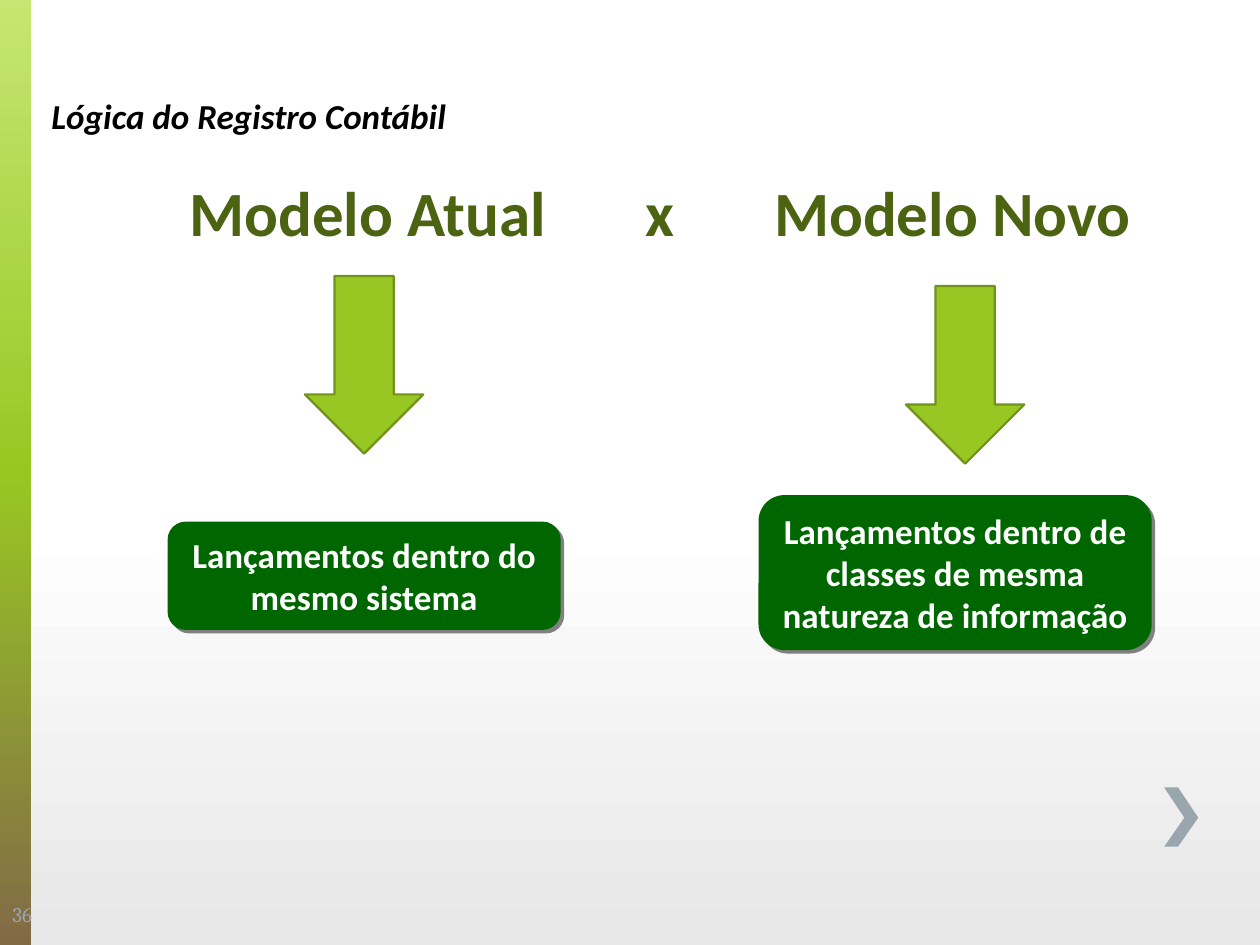
import pptx
import pptx.dml.color
import pptx.enum.shapes
import pptx.enum.text
import pptx.oxml
import pptx.oxml.ns
import pptx.util
from pptx.util import Inches

SHAPES = pptx.enum.shapes.MSO_SHAPE
ALIGN = pptx.enum.text.PP_ALIGN
ANCHOR = pptx.enum.text.MSO_ANCHOR
NAMESPACE = pptx.oxml.ns.nsdecls("a")

THEME = {
    "arrow": "98C723", "arrow_line": "70931A", "box": "006600",
    "shadow": "808080", "chevron": "99A6AE",
    "background": [(0, "FFFFFF"), (55, "FFFFFF"), (100, "E7E7E7")],
    "side_bar": [(0, "C5E672"), (50, "98C723"), (100, "826A47")],
    "title": {"name": "Calibri", "size": 20, "bold": True, "italic": True, "color": "000000"},
    "heading": {"name": "Calibri", "size": 36, "bold": True, "color": "4C6312"},
    "box_text": {"name": "Calibri", "size": 20, "bold": True, "color": "FFFFFF"},
    "number": {"name": "Cambria", "size": 12, "color": "99A6AE"},
}

TITLE = "Lógica do Registro Contábil"
HEADINGS = ["Modelo Atual", "x", "Modelo Novo"]
PAGE_NUMBER = "36"
FIRST_TAB, TAB_STEP = 2.2, 2.32
ARROW_SIZE = (0.94, 1.41)
BOX_WIDTH = 3.12
MODELS = [
    {"text": "Lançamentos dentro do mesmo sistema",
     "arrow": (2.42, 2.19), "box": (1.33, 4.14), "height": 0.86},
    {"text": "Lançamentos dentro de classes de mesma natureza de informação",
     "arrow": (7.19, 2.27), "box": (6.02, 3.93), "height": 1.23},
]
CHEVRON = [(9.35, 6.25), (9.51, 6.49), (9.35, 6.72),
           (9.24, 6.72), (9.4, 6.49), (9.24, 6.25)]


def rgb(value):
    return pptx.dml.color.RGBColor.from_string(value)


def paint_solid(shape, color):
    shape.shadow.inherit = False
    shape.fill.solid()
    shape.fill.fore_color.rgb = rgb(color)
    shape.line.fill.background()


def paint_gradient(fill, element, stops):
    """Give fill a top-to-bottom gradient; element is the XML that holds it."""
    fill.gradient()
    fill.gradient_angle = 270
    stop_list = next(element.iter(pptx.oxml.ns.qn("a:gsLst")))
    for stop in list(stop_list):
        stop_list.remove(stop)
    for percent, color in stops:
        stop_list.append(pptx.oxml.parse_xml(
            f'<a:gs {NAMESPACE} pos="{percent * 1000}"><a:srgbClr val="{color}"/></a:gs>'))


def add_shadow(shape):
    shape.shadow.inherit = False
    effects = shape.element.spPr.find(pptx.oxml.ns.qn("a:effectLst"))
    effects.append(pptx.oxml.parse_xml(
        f'<a:outerShdw {NAMESPACE} dist="35560" dir="2700000" algn="ctr" rotWithShape="0">'
        f'<a:srgbClr val="{THEME["shadow"]}"/></a:outerShdw>'))


def write(shape, text, style, align=ALIGN.LEFT, anchor=ANCHOR.TOP):
    frame = shape.text_frame
    frame.word_wrap = True
    frame.vertical_anchor = anchor
    para = frame.paragraphs[0]
    para.alignment = align
    span = para.add_run()
    span.text = text
    for key, value in THEME[style].items():
        if key == "color":
            span.font.color.rgb = rgb(value)
        else:
            setattr(span.font, key, pptx.util.Pt(value) if key == "size" else value)
    return para


def add_text(page, place, text, style, **layout):
    box = page.shapes.add_textbox(*map(Inches, place))
    return write(box, text, style, **layout)


def add_heading(page):
    """Centre each heading on its own evenly spaced tab stop."""
    para = add_text(page, (0.62, 1.33, 8.75, 0.71),
                    "".join("\t" + heading for heading in HEADINGS), "heading")
    stops = "".join(
        f'<a:tab pos="{Inches(FIRST_TAB + index * TAB_STEP)}" algn="ctr"/>'
        for index in range(len(HEADINGS)))
    para._p.get_or_add_pPr().append(
        pptx.oxml.parse_xml(f"<a:tabLst {NAMESPACE}>{stops}</a:tabLst>"))


def add_side_bar(page):
    bar = page.shapes.add_shape(SHAPES.RECTANGLE, 0, 0, Inches(0.25), Inches(7.5))
    bar.shadow.inherit = False
    bar.line.fill.background()
    paint_gradient(bar.fill, bar.element, THEME["side_bar"])


def add_chevron(page):
    start, *others = [(Inches(x), Inches(y)) for x, y in CHEVRON]
    builder = page.shapes.build_freeform(*start)
    builder.add_line_segments(others)
    paint_solid(builder.convert_to_shape(), THEME["chevron"])


def add_model(page, model):
    box = page.shapes.add_shape(
        SHAPES.ROUNDED_RECTANGLE,
        *map(Inches, (*model["box"], BOX_WIDTH, model["height"])))
    paint_solid(box, THEME["box"])
    add_shadow(box)
    write(box, model["text"], "box_text", align=ALIGN.CENTER, anchor=ANCHOR.MIDDLE)

    arrow = page.shapes.add_shape(
        SHAPES.DOWN_ARROW, *map(Inches, (*model["arrow"], *ARROW_SIZE)))
    paint_solid(arrow, THEME["arrow"])
    arrow.line.color.rgb = rgb(THEME["arrow_line"])
    arrow.line.width = pptx.util.Pt(1.25)


def main():
    deck = pptx.Presentation()
    deck.slide_width, deck.slide_height = Inches(10), Inches(7.5)
    page = deck.slides.add_slide(deck.slide_layouts[6])
    paint_gradient(page.background.fill, page.element, THEME["background"])
    add_side_bar(page)
    add_chevron(page)
    add_text(page, (0, 7.11, 0.48, 0.29), PAGE_NUMBER, "number", anchor=ANCHOR.MIDDLE)
    add_heading(page)
    for model in MODELS:
        add_model(page, model)
    add_text(page, (0.31, 0.7, 9.22, 0.44), TITLE, "title")
    deck.save("out.pptx")


if __name__ == "__main__":
    main()
